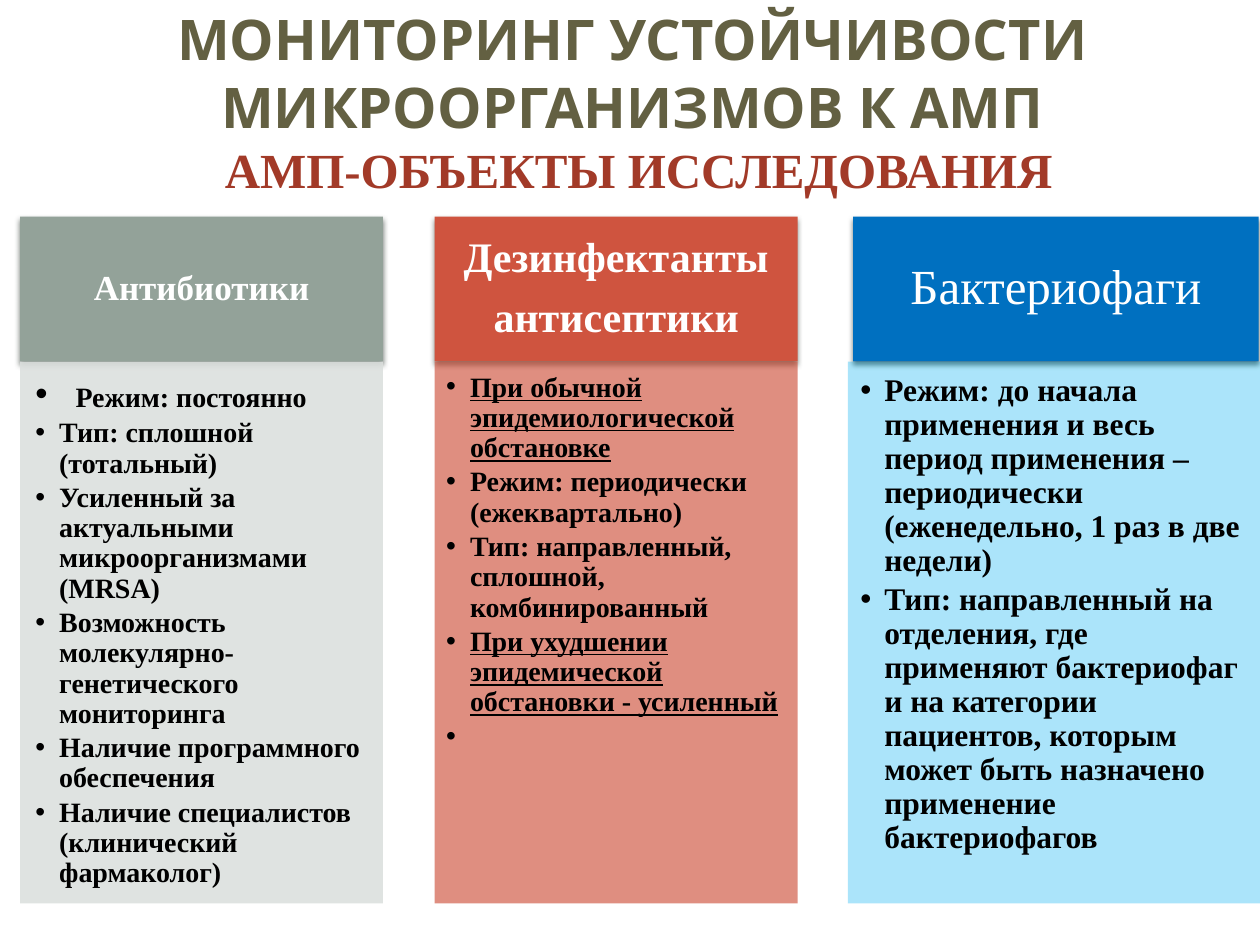
from dataclasses import dataclass

from lxml.etree import SubElement
from pptx import Presentation
from pptx.dml.color import RGBColor as Color
from pptx.enum.shapes import MSO_SHAPE as Shape
from pptx.enum.text import MSO_ANCHOR as Anchor, PP_ALIGN as Align
from pptx.oxml.ns import qn
from pptx.util import Inches, Pt


@dataclass(frozen=True)
class Theme:
    serif: str = "Times New Roman"
    display: str = "Karla"
    title: str = "636042"
    subtitle: str = "A23A28"
    light: str = "FFFFFF"
    dark: str = "000000"
    shadow: str = "5B645E"
    title_size: int = 32
    subtitle_size: int = 28
    text_size: int = 16


@dataclass(frozen=True)
class Span:
    text: str
    size: int = 0
    underline: bool = False


@dataclass(frozen=True)
class Column:
    header_span: tuple
    body_span: tuple
    header_fill: str
    body_fill: str
    opacity: int
    header_size: int
    header_bold: bool
    body_size: int
    insets: tuple
    header: tuple
    items: tuple


THEME = Theme()
WIDTH, HEIGHT = Inches(10), Inches(7.5)
HEADER_ROW = (22.93, 15.33)
BODY_ROW = (38.27, 57.33)

COLUMNS = (
    Column((1.6, 28.8), (1.6, 28.8), "93A299", "DCE0DE", 90, 20, True, THEME.text_size,
           (0.12, 0.12, 0.16, 0.17), ("Антибиотики",), (
               (Span(" ", 20), Span("Режим: постоянно")),
               (Span("Тип: сплошной (тотальный)"),),
               (Span("Усиленный за актуальными микроорганизмами (MRSA)"),),
               (Span("Возможность молекулярно-генетического мониторинга"),),
               (Span("Наличие программного обеспечения"),),
               (Span("Наличие специалистов (клинический фармаколог)"),))),
    Column((34.5, 28.8), (34.5, 28.8), "CF543F", "CF543F", 66, 24, True, THEME.text_size,
           (0.09, 0.09, 0.12, 0.14), ("Дезинфектанты", "антисептики"), (
               (Span("При обычной эпидемиологической обстановке", underline=True),),
               (Span("Режим: периодически (ежеквартально)"),),
               (Span("Тип: направленный, сплошной, комбинированный"),),
               (Span("При ухудшении эпидемической обстановки - усиленный", underline=True),),
               (Span(" "),))),
    Column((67.7, 32.2), (67.3, 33), "0070C0", "00B0F0", 33, 28, False, 18,
           (0.1, 0.1, 0.14, 0.16), ("Бактериофаги",), (
               (Span("Режим: до начала применения и весь период применения – "
                     "периодически (еженедельно, 1 раз в две недели)"),),
               (Span("Тип: направленный на отделения, где применяют бактериофаг "
                     "и на категории пациентов, которым может быть назначено "
                     "применение бактериофагов"),))),
)


def place(span, row):
    (left, width), (top, height) = span, row
    return [int(share * length / 100) for share, length in
            ((left, WIDTH), (top, HEIGHT), (width, WIDTH), (height, HEIGHT))]


def style(run, size, color, bold=True, name=THEME.serif, underline=False):
    font = run.font
    font.name, font.size, font.bold = name, Pt(size), bold
    font.underline = underline
    font.color.rgb = Color.from_string(color)


def set_insets(frame, insets):
    frame.word_wrap = True
    (frame.margin_left, frame.margin_top,
     frame.margin_right, frame.margin_bottom) = map(Inches, insets)


def add_panel(slide, span, row, fill, opacity=100):
    shape = slide.shapes.add_shape(Shape.RECTANGLE, *place(span, row))
    shape.shadow.inherit = False
    shape.fill.solid()
    shape.fill.fore_color.rgb = Color.from_string(fill)
    shape.line.fill.background()
    if opacity < 100:
        color = shape.fill._xPr.find(".//" + qn("a:srgbClr"))
        SubElement(color, qn("a:alpha"), val=str(opacity * 1000))
    return shape


def add_shadow(shape):
    effects = shape._element.spPr.find(qn("a:effectLst"))
    shadow = SubElement(effects, qn("a:outerShdw"), blurRad=str(Pt(3.1)),
                        dist=str(Pt(2)), dir="5400000", rotWithShape="0")
    color = SubElement(shadow, qn("a:srgbClr"), val=THEME.shadow)
    SubElement(color, qn("a:alpha"), val="83000")


def add_bullet(paragraph, indent):
    properties = paragraph._p.get_or_add_pPr()
    properties.set("marL", str(Inches(indent)))
    properties.set("indent", str(-Inches(indent)))
    SubElement(properties, qn("a:buFont"), typeface="Arial")
    SubElement(properties, qn("a:buChar"), char="•")


def add_header(slide, column):
    shape = add_panel(slide, column.header_span, HEADER_ROW, column.header_fill)
    add_shadow(shape)
    frame = shape.text_frame
    set_insets(frame, (0.19, 0.11, 0.19, 0.11))
    frame.vertical_anchor = Anchor.MIDDLE
    frame.text = "\n".join(column.header)
    for paragraph in frame.paragraphs:
        paragraph.alignment = Align.CENTER
        paragraph.line_spacing = 0.9
        paragraph.space_after = Pt(column.header_size * 0.35)
        style(paragraph.runs[0], column.header_size, THEME.light, column.header_bold)


def add_body(slide, column):
    shape = add_panel(slide, column.body_span, BODY_ROW, column.body_fill, column.opacity)
    frame = shape.text_frame
    set_insets(frame, column.insets)
    frame.vertical_anchor = Anchor.TOP
    for index, spans in enumerate(column.items):
        paragraph = frame.add_paragraph() if index else frame.paragraphs[0]
        paragraph.alignment = Align.LEFT
        paragraph.line_spacing = 0.9
        paragraph.space_after = Pt(column.body_size * 0.15)
        add_bullet(paragraph, 0.25 if len(spans) > 1 else 0.19)
        for span in spans:
            run = paragraph.add_run()
            run.text = span.text
            style(run, span.size or column.body_size, THEME.dark, underline=span.underline)


def add_title(slide):
    box = slide.shapes.add_textbox(*place((0.2, 100), (-0.13, 22)))
    frame = box.text_frame
    frame.word_wrap = True
    frame.text = "МОНИТОРИНГ УСТОЙЧИВОСТИ МИКРООРГАНИЗМОВ К АМП\n АМП-ОБЪЕКТЫ ИССЛЕДОВАНИЯ"
    title, subtitle = frame.paragraphs
    title.alignment = subtitle.alignment = Align.CENTER
    style(title.runs[0], THEME.title_size, THEME.title, name=THEME.display)
    style(subtitle.runs[0], THEME.subtitle_size, THEME.subtitle)


def main():
    presentation = Presentation()
    presentation.slide_width, presentation.slide_height = WIDTH, HEIGHT
    slide = presentation.slides.add_slide(presentation.slide_layouts[6])
    for column in COLUMNS:
        add_header(slide, column)
        add_body(slide, column)
    add_title(slide)
    presentation.save("out.pptx")


if __name__ == "__main__":
    main()
